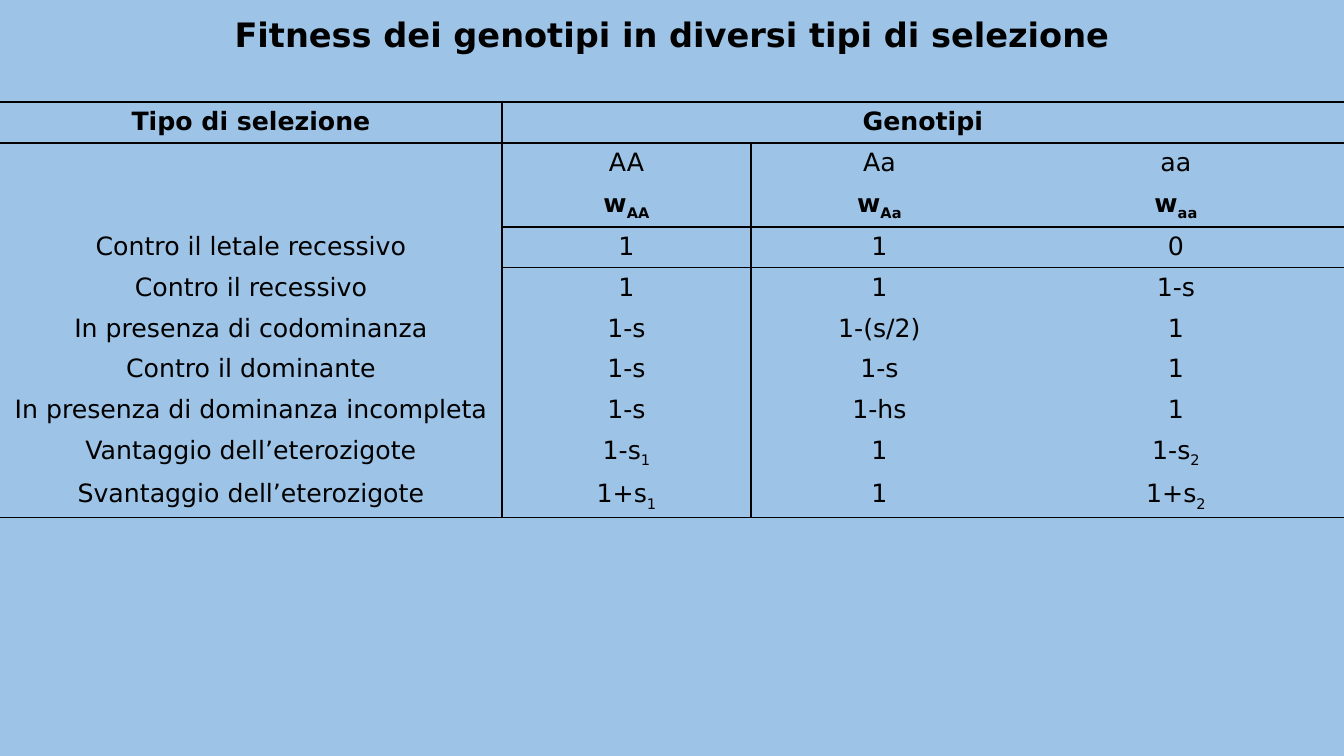
from lxml import etree
from pptx import Presentation
from pptx.dml.color import RGBColor
from pptx.enum.text import MSO_ANCHOR, MSO_AUTO_SIZE, PP_ALIGN
from pptx.oxml.ns import qn
from pptx.util import Pt

CENTER = PP_ALIGN.CENTER
MIDDLE = MSO_ANCHOR.MIDDLE
TOP = MSO_ANCHOR.TOP
NO_AUTOFIT = MSO_AUTO_SIZE.NONE
FONT = "DejaVu Sans"
BLACK = "000000"
BACKGROUND = "9DC3E6"
COLUMN_WIDTHS = [358.56, 177.84, 183.6, 240]
ROW_HEIGHT = 29.2
# An underscore starts a subscript.
ROWS = [
    ["Tipo di selezione", "Genotipi", "", ""],
    ["", "AA", "Aa", "aa"],
    ["", "w_AA", "w_Aa", "w_aa"],
    ["Contro il letale recessivo", "1", "1", "0"],
    ["Contro il recessivo", "1", "1", "1-s"],
    ["In presenza di codominanza", "1-s", "1-(s/2)", "1"],
    ["Contro il dominante", "1-s", "1-s", "1"],
    ["In presenza di dominanza incompleta", "1-s", "1-hs", "1"],
    ["Vantaggio dell’eterozigote", "1-s_1", "1", "1-s_2"],
    ["Svantaggio dell’eterozigote", "1+s_1", "1", "1+s_2"],
]
BOLD_ROWS = (0, 2)
# Ruled edge: first column or row that the line reaches.
HORIZONTAL_RULES = {0: 0, 1: 0, 3: 1, 4: 1, len(ROWS): 0}
VERTICAL_RULES = {1: 0, 2: 1}


def write_text(paragraph, text, size, bold):
    """Write centred text, with the part after an underscore as a subscript."""
    paragraph.alignment = CENTER
    for position, part in enumerate(text.split("_")):
        run = paragraph.add_run()
        run.text = part
        run.font.color.rgb = RGBColor.from_string(BLACK)
        for name, value in {"name": FONT, "size": Pt(size), "bold": bold}.items():
            setattr(run.font, name, value)
        if position:
            run.font._element.set("baseline", "-25000")


def set_borders(cell, edges):
    """Draw the edges that are true in a dict of L, R, T, B; clear the others."""
    properties = cell._tc.get_or_add_tcPr()
    for position, (side, drawn) in enumerate(edges.items()):
        line = etree.Element(qn(f"a:ln{side}"), w=str(Pt(1)))
        if drawn:
            fill = etree.SubElement(line, qn("a:solidFill"))
            etree.SubElement(fill, qn("a:srgbClr"), val=BLACK)
        else:
            etree.SubElement(line, qn("a:noFill"))
        properties.insert(position, line)


presentation = Presentation()
presentation.slide_width = Pt(960)
presentation.slide_height = Pt(540)
slide = presentation.slides.add_slide(presentation.slide_layouts[5])
slide.background.fill.solid()
slide.background.fill.fore_color.rgb = RGBColor.from_string(BACKGROUND)

title = slide.shapes.title
for name, value in {"left": 0, "top": 6.5, "width": 960, "height": 36}.items():
    setattr(title, name, Pt(value))
for name, value in {"word_wrap": True, "auto_size": NO_AUTOFIT, "vertical_anchor": MIDDLE}.items():
    setattr(title.text_frame, name, value)
write_text(title.text_frame.paragraphs[0],
           "Fitness dei genotipi in diversi tipi di selezione", 24, True)

table = slide.shapes.add_table(len(ROWS), len(COLUMN_WIDTHS), Pt(0), Pt(72.9),
                               Pt(960), Pt(ROW_HEIGHT * len(ROWS))).table
table.first_row = False
table.horz_banding = False
for column, width in zip(table.columns, COLUMN_WIDTHS):
    column.width = Pt(width)

for row_index, texts in enumerate(ROWS):
    table.rows[row_index].height = Pt(ROW_HEIGHT)
    for column_index, text in enumerate(texts):
        cell = table.cell(row_index, column_index)
        cell.vertical_anchor = TOP
        cell.fill.background()
        if text:
            write_text(cell.text_frame.paragraphs[0], text, 18, row_index in BOLD_ROWS)
        set_borders(cell, {
            "L": row_index >= VERTICAL_RULES.get(column_index, len(ROWS)),
            "R": row_index >= VERTICAL_RULES.get(column_index + 1, len(ROWS)),
            "T": column_index >= HORIZONTAL_RULES.get(row_index, len(texts)),
            "B": column_index >= HORIZONTAL_RULES.get(row_index + 1, len(texts)),
        })
table.cell(0, 1).merge(table.cell(0, 3))

presentation.save("out.pptx")
